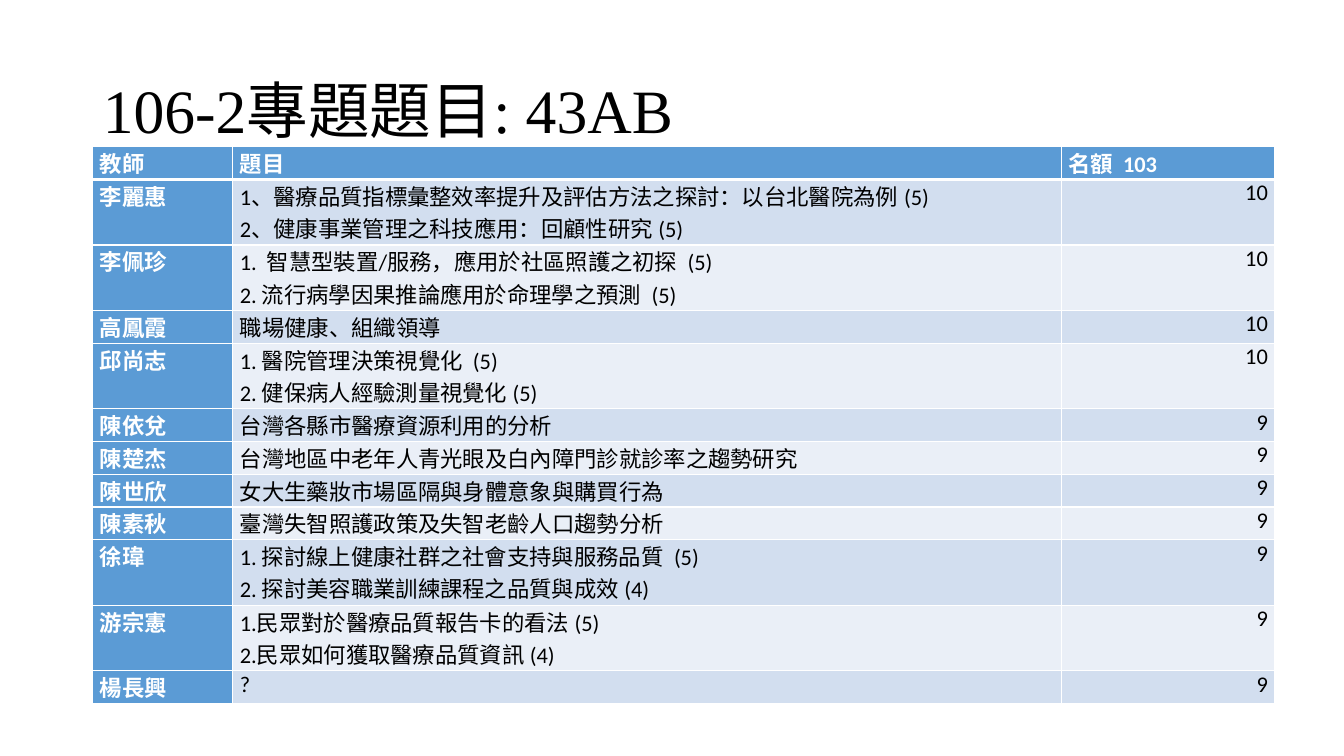
from dataclasses import dataclass
from typing import NamedTuple

from lxml import etree
from pptx import Presentation
from pptx import util as u
from pptx.dml.color import RGBColor
from pptx.enum import text
from pptx.oxml import ns

SCALE = 4572  # EMU per px, 200 px to the inch


@dataclass(frozen=True)
class Theme:
    title_font: str = "Times New Roman"
    body_font: str = "Calibri"
    title_size: int = 44
    body_size: int = 16
    ink: str = "000000"
    paper: str = "FFFFFF"
    accent: str = "5B9BD5"
    bands: tuple[str, str] = ("D2DEEF", "EAEFF7")
    rule: int = 1
    header_rule: int = 3


class Project(NamedTuple):
    teacher: str
    topics: list[str]
    quota: int


THEME = Theme()
TITLE = "106-2專題題目: 43AB"
HEADINGS = ["教師", "題目", "名額  103"]
PROJECTS = [
    Project("李麗惠", ["1、醫療品質指標彙整效率提升及評估方法之探討：以台北醫院為例 (5)",
                    "2、健康事業管理之科技應用：回顧性研究 (5)"], 10),
    Project("李佩珍", ["1.  智慧型裝置/服務，應用於社區照護之初探  (5)",
                    "2. 流行病學因果推論應用於命理學之預測  (5)"], 10),
    Project("高鳳霞", ["職場健康、組織領導"], 10),
    Project("邱尚志", ["1. 醫院管理決策視覺化  (5)", "2. 健保病人經驗測量視覺化 (5)"], 10),
    Project("陳依兌", ["台灣各縣市醫療資源利用的分析"], 9),
    Project("陳楚杰", ["台灣地區中老年人青光眼及白內障門診就診率之趨勢研究"], 9),
    Project("陳世欣", ["女大生藥妝市場區隔與身體意象與購買行為"], 9),
    Project("陳素秋", ["臺灣失智照護政策及失智老齡人口趨勢分析"], 9),
    Project("徐瑋", ["1. 探討線上健康社群之社會支持與服務品質  (5)",
                   "2. 探討美容職業訓練課程之品質與成效 (4)"], 9),
    Project("游宗憲", ["1.民眾對於醫療品質報告卡的看法 (5)", "2.民眾如何獲取醫療品質資訊 (4)"], 9),
    Project("楊長興", ["?"], 9),
]
COLUMNS = [278, 1644, 424]
LINE_HEIGHT = 65


def px(n: int) -> u.Emu:
    return u.Emu(n * SCALE)


def set_borders(cell, top: int, bottom: int) -> None:
    tc_pr = cell._tc.get_or_add_tcPr()
    widths = {"lnL": THEME.rule, "lnR": THEME.rule, "lnT": top, "lnB": bottom}
    for tag, width in widths.items():
        ln = etree.SubElement(tc_pr, ns.qn(f"a:{tag}"), w=str(u.Pt(width)))
        fill = etree.SubElement(ln, ns.qn("a:solidFill"))
        etree.SubElement(fill, ns.qn("a:srgbClr"), val=THEME.paper)


def fill_cell(cell, lines: list[str], fill: str, strong: bool, right: bool) -> None:
    cell.margin_left = cell.margin_right = px(14)
    cell.margin_top = cell.margin_bottom = 0
    cell.fill.solid()
    cell.fill.fore_color.rgb = RGBColor.from_string(fill)
    tf = cell.text_frame
    tf.text = "\n".join(lines)
    for p in tf.paragraphs:
        p.alignment = text.PP_ALIGN.RIGHT if right else text.PP_ALIGN.LEFT
        p.font.name = THEME.body_font
        p.font.size = u.Pt(THEME.body_size)
        p.font.bold = strong
        p.font.color.rgb = RGBColor.from_string(THEME.paper if strong else THEME.ink)


def add_title(slide) -> None:
    sp = slide.shapes.title
    sp.left, sp.top, sp.width, sp.height = px(184), px(80), px(2300), px(290)
    tf = sp.text_frame
    tf.text = TITLE
    tf.auto_size = text.MSO_AUTO_SIZE.NONE
    tf.vertical_anchor = text.MSO_ANCHOR.MIDDLE
    p = tf.paragraphs[0]
    p.alignment = text.PP_ALIGN.LEFT
    p.line_spacing = 0.9
    p.font.name = THEME.title_font
    p.font.size = u.Pt(THEME.title_size)
    p.font.color.rgb = RGBColor.from_string(THEME.ink)


def add_project_table(slide) -> None:
    rows = [[[h] for h in HEADINGS]]
    rows += [[[p.teacher], p.topics, [str(p.quota)]] for p in PROJECTS]
    heights = [LINE_HEIGHT * max(map(len, row)) for row in rows]
    table = slide.shapes.add_table(len(rows), len(COLUMNS), px(184), px(291),
                                   px(sum(COLUMNS)), px(sum(heights))).table
    for column, width in zip(table.columns, COLUMNS):
        column.width = px(width)

    for i, (row, height) in enumerate(zip(rows, heights)):
        table.rows[i].height = px(height)
        for j, lines in enumerate(row):
            cell = table.cell(i, j)
            strong = i == 0 or j == 0
            # The heavy rule lies between the header and the first project
            set_borders(cell, THEME.header_rule if i == 1 else THEME.rule,
                        THEME.header_rule if i == 0 else THEME.rule)
            fill_cell(cell, lines, THEME.accent if strong else THEME.bands[(i - 1) % 2],
                      strong, right=i > 0 and j == 2)


def main() -> None:
    prs = Presentation()
    prs.slide_width, prs.slide_height = px(2667), px(1500)
    slide = prs.slides.add_slide(prs.slide_layouts[5])
    add_title(slide)
    add_project_table(slide)
    prs.save("out.pptx")


if __name__ == "__main__":
    main()
